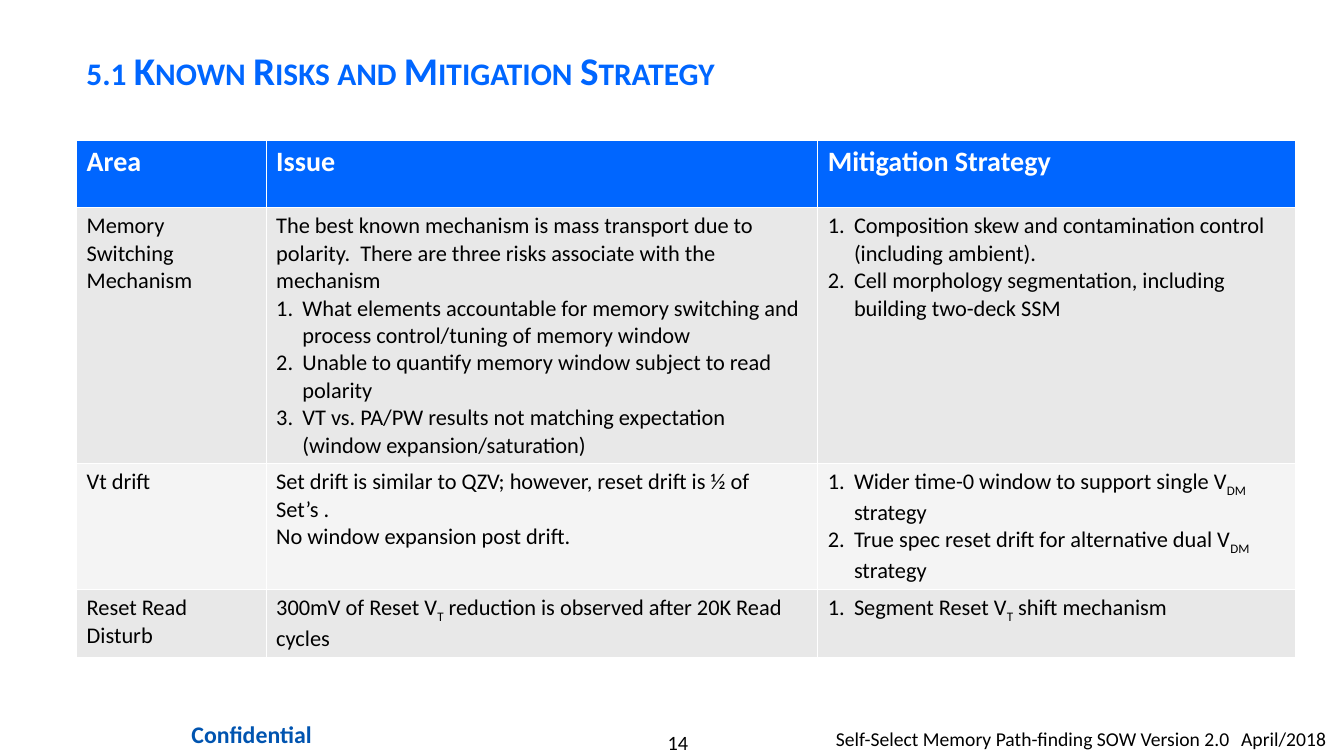
import pptx
import pptx.util
import pptx.dml.color
import pptx.enum.text
import pptx.oxml.ns
import lxml.etree

SLIDE_WIDTH = pptx.util.Inches(13.33)
SLIDE_HEIGHT = pptx.util.Inches(7.5)
FONT = "Calibri"
COLORS = {
    "header": "0066FF",
    "confidential": "0054B0",
    "text": "000000",
    "white": "FFFFFF",
    "odd_row": "E8E8E8",
    "even_row": "F4F4F4",
}
ALIGN = pptx.enum.text.PP_ALIGN
ANCHOR = pptx.enum.text.MSO_ANCHOR

# Regions as percent of the slide: left, top, width, height
TITLE_BOX = (5.7, 2.8, 82.97, 12.27)
TABLE_BOX = (5.7, 18.53, 90.7, 68.4)
NUMBER_BOX = (41.71, 96.53, 17.48, 3.2)
CONFIDENTIAL_BOX = (11.63, 94.4, 14.18, 5.47)
VERSION_BOX = (62.19, 95.47, 37.88, 4.53)

# Percent of the table's width and height
COLUMN_SHARES = (15.55, 45.25, 39.2)
ROW_SHARES = (13.06, 49.51, 24.37, 13.06)

# "# " starts a numbered paragraph; text between "~" marks is subscript
HEADINGS = ("Area", "Issue", "Mitigation Strategy")
RISKS = (
    (
        ["Memory Switching Mechanism"],
        [
            "The best known mechanism is mass transport due to polarity.  "
            "There are three risks associate with the mechanism",
            "# What elements accountable for memory switching and "
            "process control/tuning of memory window",
            "# Unable to quantify memory window subject to read polarity",
            "# VT vs. PA/PW results not matching expectation (window expansion/saturation)",
        ],
        [
            "# Composition skew and contamination control (including ambient).",
            "# Cell morphology segmentation, including building two-deck SSM",
        ],
    ),
    (
        ["Vt drift"],
        [
            "Set drift is similar to QZV; however, reset drift is ½ of Set’s .",
            "No window expansion post drift.",
        ],
        [
            "# Wider time-0 window to support single V~DM~ strategy",
            "# True spec reset drift for alternative dual V~DM~ strategy",
        ],
    ),
    (
        ["Reset Read Disturb"],
        ["300mV of Reset V~T~ reduction is observed after 20K Read cycles"],
        ["# Segment Reset V~T~ shift mechanism"],
    ),
)


def color(name):
    return pptx.dml.color.RGBColor.from_string(COLORS[name])


def place(box):
    """Turn percentages of the slide into lengths."""
    sides = (SLIDE_WIDTH, SLIDE_HEIGHT, SLIDE_WIDTH, SLIDE_HEIGHT)
    return [int(side * share / 100) for side, share in zip(sides, box)]


def add_property(para, tag, **attributes):
    properties = para._p.get_or_add_pPr()
    return lxml.etree.SubElement(properties, pptx.oxml.ns.qn(tag), **attributes)


def style(para, size, color_name, bold=False):
    para.font.name = FONT
    para.font.size = pptx.util.Pt(size)
    para.font.bold = bold
    para.font.color.rgb = color(color_name)


def add_text(page, box, text, size, color_name, bold=False, align=ALIGN.LEFT,
             margins=(0, 0), anchor=ANCHOR.TOP):
    frame = page.shapes.add_textbox(*place(box)).text_frame
    frame.word_wrap = True
    frame.vertical_anchor = anchor
    frame.margin_left = frame.margin_right = pptx.util.Inches(margins[0])
    frame.margin_top = frame.margin_bottom = pptx.util.Inches(margins[1])
    para = frame.paragraphs[0]
    para.text = text
    para.alignment = align
    if "\t" in text:
        stops = add_property(para, "a:tabLst")
        lxml.etree.SubElement(stops, pptx.oxml.ns.qn("a:tab"),
                              pos=str(pptx.util.Inches(4.02)), algn="l")
    style(para, size, color_name, bold)
    return para


def add_title(page, box):
    para = add_text(page, box, "5.1 Known Risks and Mitigation Strategy", 28, "header",
                    bold=True, margins=(0.1, 0.05), anchor=ANCHOR.MIDDLE)
    para.line_spacing = 1.1
    para.runs[0]._r.get_or_add_rPr().set("cap", "small")


def add_footer(page):
    add_text(page, NUMBER_BOX, "14", 14.5, "text", align=ALIGN.CENTER)
    add_text(page, CONFIDENTIAL_BOX, "Confidential", 17, "confidential",
             bold=True, align=ALIGN.CENTER, margins=(0.12, 0.06))
    add_text(page, VERSION_BOX, "Self-Select Memory Path-finding SOW Version 2.0\tApril/2018",
             14, "text", margins=(0, 0.05))


def fill_cell(cell, lines, fill, size, color_name, bold=False):
    cell.fill.solid()
    cell.fill.fore_color.rgb = color(fill)
    frame = cell.text_frame
    for index, line in enumerate(lines):
        para = frame.add_paragraph() if index else frame.paragraphs[0]
        if line.startswith("# "):
            indent = pptx.util.Inches(0.26)
            properties = para._p.get_or_add_pPr()
            properties.set("marL", str(indent))
            properties.set("indent", str(-indent))
            add_property(para, "a:buFont", typeface="+mj-lt")
            add_property(para, "a:buAutoNum", type="arabicPeriod")
        for part, words in enumerate(line.removeprefix("# ").split("~")):
            span = para.add_run()
            span.text = words
            if part % 2:
                span._r.get_or_add_rPr().set("baseline", "-25000")
        style(para, size, color_name, bold)


def add_risk_table(page, box):
    left, top, width, height = place(box)
    table = page.shapes.add_table(len(ROW_SHARES), len(COLUMN_SHARES),
                                  left, top, width, height).table
    table.horz_banding = False
    for column, share in zip(table.columns, COLUMN_SHARES):
        column.width = int(width * share / 100)
    for row, share in zip(table.rows, ROW_SHARES):
        row.height = int(height * share / 100)
    for column, heading in enumerate(HEADINGS):
        fill_cell(table.cell(0, column), [heading], "header", 20, "white", bold=True)
    for row, risk in enumerate(RISKS, start=1):
        fill = "odd_row" if row % 2 else "even_row"
        for column, lines in enumerate(risk):
            fill_cell(table.cell(row, column), lines, fill, 16, "text")


def main():
    deck = pptx.Presentation()
    deck.slide_width = SLIDE_WIDTH
    deck.slide_height = SLIDE_HEIGHT
    page = deck.slides.add_slide(deck.slide_layouts[6])
    add_footer(page)
    add_title(page, TITLE_BOX)
    add_risk_table(page, TABLE_BOX)
    deck.save("out.pptx")


if __name__ == "__main__":
    main()
